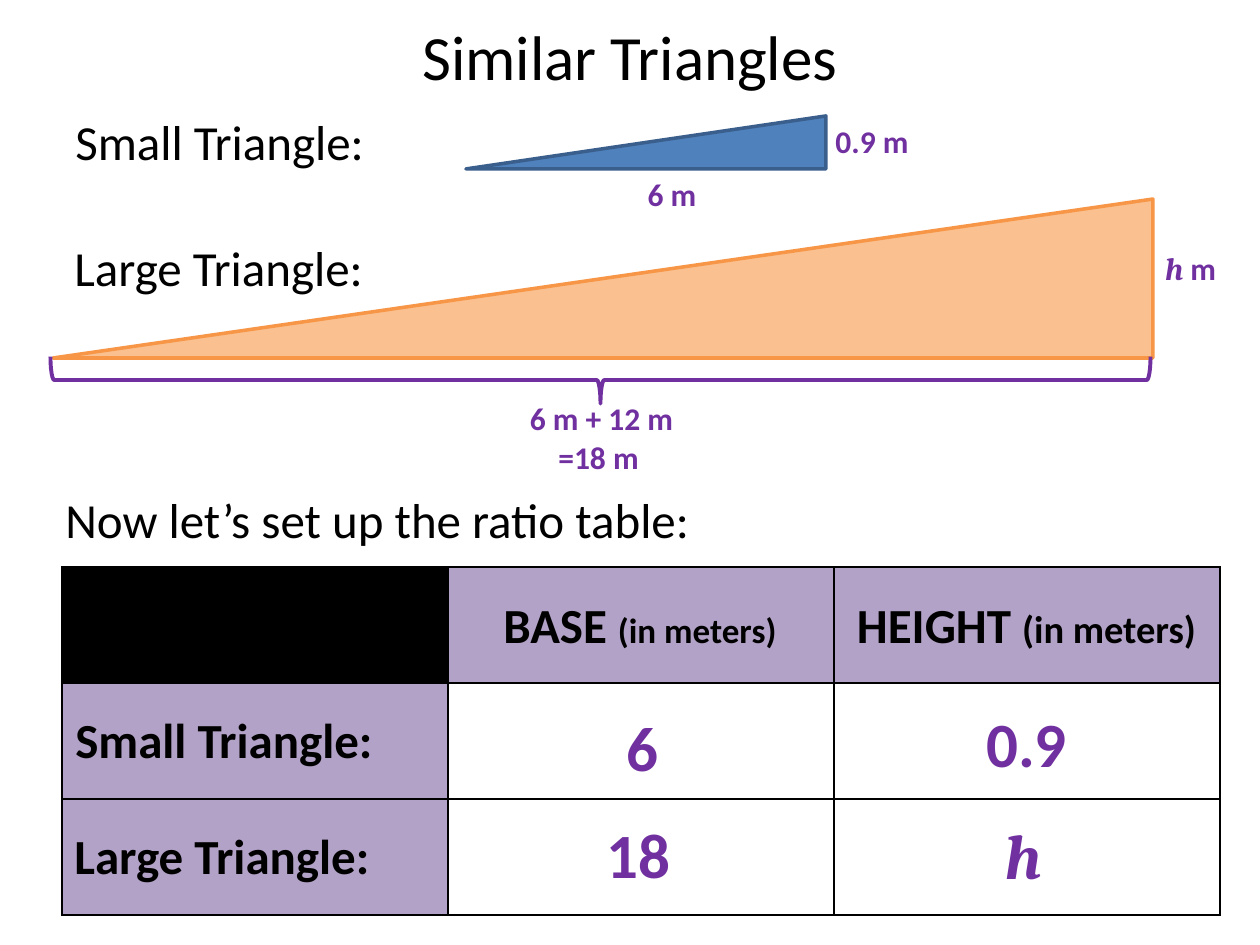
from dataclasses import dataclass

from lxml.etree import SubElement
from pptx import Presentation
from pptx.dml.color import RGBColor
from pptx.enum.shapes import MSO_SHAPE
from pptx.enum.text import MSO_ANCHOR, PP_ALIGN
from pptx.oxml.ns import qn
from pptx.util import Emu, Pt

PX = 914400 / 126


@dataclass(frozen=True)
class Theme:
    font: str = "Calibri"
    math_font: str = "Cambria"
    black: str = "000000"
    purple: str = "7030A0"
    lavender: str = "B3A2C7"
    blue: str = "4F81BD"
    dark_blue: str = "3A5F8C"
    peach: str = "FAC090"
    orange: str = "F79646"
    title: int = 36
    body: int = 28
    label: int = 18
    value: int = 36


THEME = Theme()


def px(*lengths):
    return [Emu(round(length * PX)) for length in lengths]


def place(shape, box):
    shape.left, shape.top, shape.width, shape.height = px(*box)


def write(frame, runs, color, centred, bold):
    """Fill a frame with (text, size) runs; the variable h is set in math style."""
    frame.word_wrap = True
    paragraph = frame.paragraphs[0]
    paragraph.alignment = PP_ALIGN.CENTER if centred else PP_ALIGN.LEFT
    for text, size in runs:
        run = paragraph.add_run()
        run.text = text
        is_variable = text == "h"
        run.font.name = THEME.math_font if is_variable else THEME.font
        run.font.size = Pt(size)
        run.font.bold = bold
        run.font.italic = is_variable
        run.font.color.rgb = RGBColor.from_string(color)


def add_title(slide, text):
    title = slide.shapes.title
    place(title, (21, 0, 1218, 110))
    title.text_frame.vertical_anchor = MSO_ANCHOR.MIDDLE
    write(title.text_frame, [(text, THEME.title)], THEME.black, True, False)


def add_text(slide, box, runs, color=THEME.black, centred=False, bold=False):
    textbox = slide.shapes.add_textbox(*px(*box))
    write(textbox.text_frame, runs, color, centred, bold)


def add_measure(slide, box, *texts, size=THEME.label):
    runs = [(text, size) for text in texts]
    add_text(slide, box, runs, THEME.purple, centred=True, bold=True)


def add_outlined(slide, kind, box, line, width):
    shape = slide.shapes.add_shape(kind, *px(*box))
    shape.shadow.inherit = False
    shape.line.color.rgb = RGBColor.from_string(line)
    shape.line.width = Pt(width)
    return shape


def add_triangle(slide, box, fill, line):
    """Add a right triangle with its upright side on the right."""
    triangle = add_outlined(slide, MSO_SHAPE.RIGHT_TRIANGLE, box, line, 2)
    triangle.fill.solid()
    triangle.fill.fore_color.rgb = RGBColor.from_string(fill)
    triangle._element.spPr.find(qn("a:xfrm")).set("flipH", "1")


def add_base_brace(slide, box):
    brace = add_outlined(slide, MSO_SHAPE.LEFT_BRACE, box, THEME.purple, 2.25)
    brace.fill.background()
    brace.rotation = 270
    brace.adjustments[0] = 0.08
    brace.adjustments[1] = 0.5


def set_borders(cell):
    properties = cell._tc.get_or_add_tcPr()
    for index, side in enumerate(("lnL", "lnR", "lnT", "lnB")):
        border = properties.makeelement(qn(f"a:{side}"), {"w": str(Pt(1))})
        fill = SubElement(border, qn("a:solidFill"))
        SubElement(fill, qn("a:srgbClr"), val=THEME.black)
        properties.insert(index, border)


def add_ratio_grid(slide, left, top, column_width, row_height, count=3):
    size = (left, top, column_width * count, row_height * count)
    table = slide.shapes.add_table(count, count, *px(*size)).table
    table.first_row = table.horz_banding = False
    for row in range(count):
        for column in range(count):
            cell = table.cell(row, column)
            if row and column:
                cell.fill.background()
            else:
                cell.fill.solid()
                color = THEME.lavender if row or column else THEME.black
                cell.fill.fore_color.rgb = RGBColor.from_string(color)
            set_borders(cell)


def add_triangles(slide):
    add_triangle(slide, (466, 116, 360, 53), THEME.blue, THEME.dark_blue)
    add_triangle(slide, (53, 199, 1100, 159), THEME.peach, THEME.orange)
    add_base_brace(slide, (577, -170, 47, 1100))
    for box, text in (
        ((63, 105, 325, 84), "Small Triangle:"),
        ((62, 231, 321, 84), "Large Triangle:"),
    ):
        add_text(slide, box, [(text, THEME.body)])
    add_measure(slide, (630, 169, 84, 50), "6 m")
    add_measure(slide, (809, 116, 126, 50), "0.9 m")
    add_measure(slide, (1144, 243, 93, 50), "h", " m")
    add_measure(slide, (500, 393, 203, 50), "6 m + 12 m")
    add_measure(slide, (525, 432, 147, 50), "=18 m")


def add_ratio_table(slide):
    add_text(slide, (53, 483, 662, 84), [("Now let’s set up the ratio table:", THEME.body)])
    add_ratio_grid(slide, 62, 567, 386, 116)
    for box, text in (
        ((63, 703, 378, 84), "Small Triangle:"),
        ((62, 819, 379, 84), "Large Triangle:"),
    ):
        add_text(slide, box, [(text, THEME.body)], bold=True)
    for box, text, unit_size in (
        ((451, 588, 378, 84), "BASE ", 20),
        ((837, 588, 379, 84), "HEIGHT ", 22),
    ):
        runs = [(text, THEME.body), ("(in meters)", unit_size)]
        add_text(slide, box, runs, centred=True, bold=True)
    for box, text in (
        ((455, 702, 374, 89), "6"),
        ((837, 698, 379, 89), "0.9"),
        ((447, 809, 383, 89), "18"),
        ((829, 810, 388, 89), "h"),
    ):
        add_measure(slide, box, text, size=THEME.value)


def main():
    presentation = Presentation()
    presentation.slide_width, presentation.slide_height = px(1260, 945)
    slide = presentation.slides.add_slide(presentation.slide_layouts[5])
    add_title(slide, "Similar Triangles")
    add_triangles(slide)
    add_ratio_table(slide)
    presentation.save("out.pptx")


if __name__ == "__main__":
    main()
